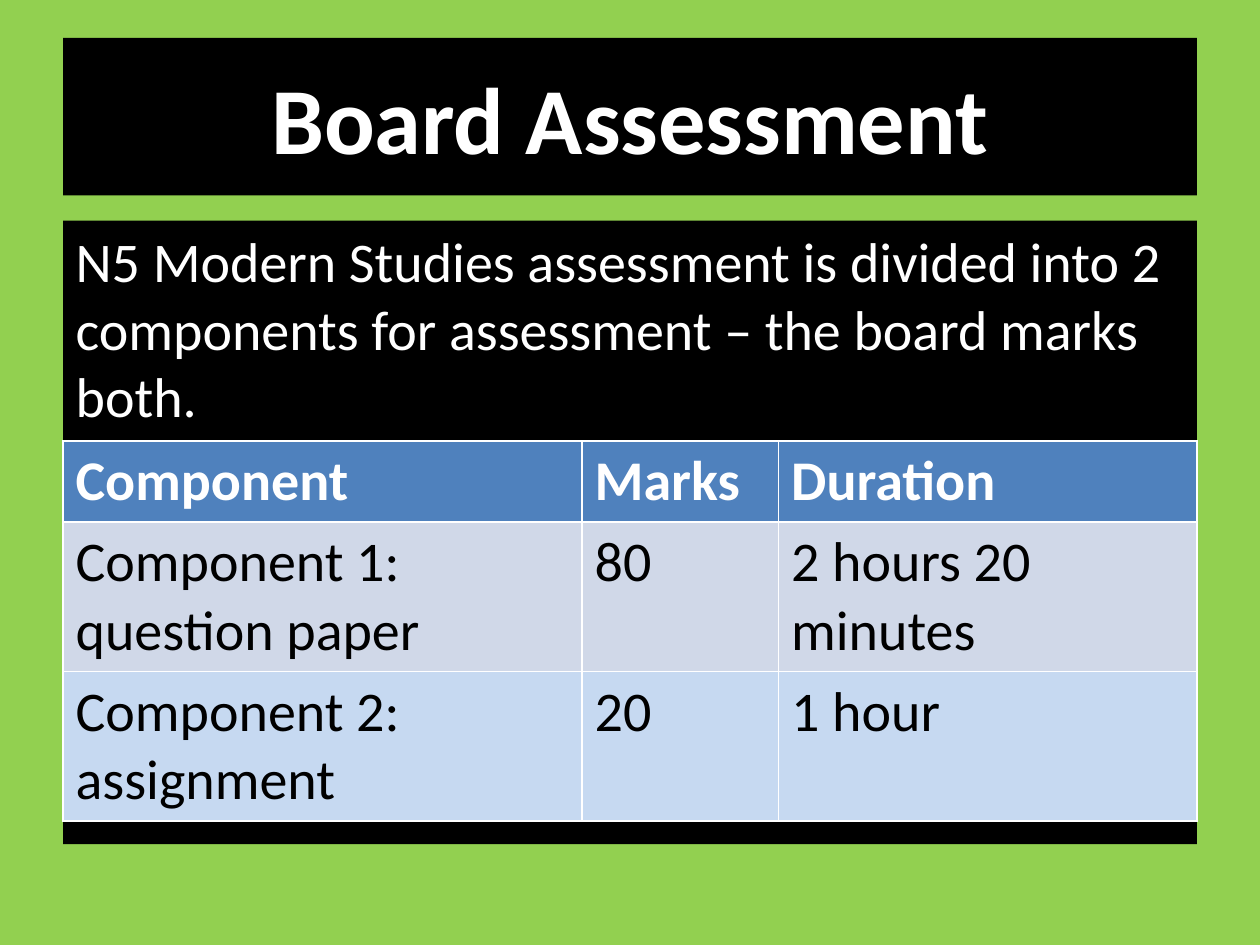
from pptx import Presentation
from pptx.dml.color import RGBColor
from pptx.enum.text import MSO_ANCHOR, MSO_AUTO_SIZE, PP_ALIGN
from pptx.oxml.xmlchemy import OxmlElement
from pptx.util import Inches, Pt

GREEN = RGBColor(0x92, 0xD0, 0x50)
BLACK = RGBColor(0x00, 0x00, 0x00)
WHITE = RGBColor(0xFF, 0xFF, 0xFF)
HEADER_BLUE = RGBColor(0x4F, 0x81, 0xBD)
ROW_GREY = RGBColor(0xD0, 0xD8, 0xE8)
ROW_BLUE = RGBColor(0xC6, 0xD9, 0xF1)
FONT = "Calibri"

COLUMN_WIDTHS = (4.12, 1.56, 3.32)
ROWS = [
    (("Component", "Marks", "Duration"), 0.64, HEADER_BLUE, WHITE, True),
    (("Component 1: question paper", "80", "2 hours 20 minutes"), 1.18, ROW_GREY, BLACK, False),
    (("Component 2: assignment", "20", "1 hour"), 1.18, ROW_BLUE, BLACK, False),
]


def write(tf, text, size, color, bold=False):
    """Fill a text frame with one formatted paragraph and return it."""
    tf.text = text
    p = tf.paragraphs[0]
    font = p.runs[0].font
    font.name, font.size, font.bold = FONT, Pt(size), bold
    font.color.rgb = color
    return p


def place_panel(sp, box):
    """Place a placeholder in its box with a black fill."""
    sp.left, sp.top, sp.width, sp.height = (Inches(v) for v in box)
    sp.fill.solid()
    sp.fill.fore_color.rgb = BLACK
    sp.text_frame.word_wrap = True
    sp.text_frame.auto_size = MSO_AUTO_SIZE.NONE


def add_title(slide, box):
    """Place the slide title in its box."""
    sp = slide.shapes.title
    place_panel(sp, box)
    sp.text_frame.vertical_anchor = MSO_ANCHOR.MIDDLE
    p = write(sp.text_frame, "Board Assessment", 54, WHITE, True)
    p.alignment = PP_ALIGN.CENTER


def add_body(slide, box):
    """Place the introduction, without a bullet, in its box."""
    sp = slide.placeholders[1]
    place_panel(sp, box)
    text = ("N5 Modern Studies assessment is divided into 2 components "
            "for assessment – the board marks both.")
    p = write(sp.text_frame, text, 32, WHITE)
    pPr = p._p.get_or_add_pPr()
    pPr.set("marL", "0")
    pPr.set("indent", "0")
    pPr.append(OxmlElement("a:buNone"))


def add_components_table(slide, box):
    """Place the table of assessment components in its box."""
    frame = slide.shapes.add_table(len(ROWS), len(COLUMN_WIDTHS), *(Inches(v) for v in box))
    table = frame.table
    for column, width in zip(table.columns, COLUMN_WIDTHS):
        column.width = Inches(width)
    for row, (texts, height, fill, color, bold) in zip(table.rows, ROWS):
        row.height = Inches(height)
        for cell, text in zip(row.cells, texts):
            cell.fill.solid()
            cell.fill.fore_color.rgb = fill
            write(cell.text_frame, text, 32, color, bold)


def main():
    """Build and save the assessment slide."""
    prs = Presentation()
    prs.slide_width, prs.slide_height = Inches(10), Inches(7.5)
    slide = prs.slides.add_slide(prs.slide_layouts[1])
    slide.background.fill.solid()
    slide.background.fill.fore_color.rgb = GREEN
    add_title(slide, (0.5, 0.3, 9, 1.25))
    add_body(slide, (0.5, 1.75, 9, 4.95))
    add_components_table(slide, (0.5, 3.5, 9, 3))
    prs.save("out.pptx")


if __name__ == "__main__":
    main()
